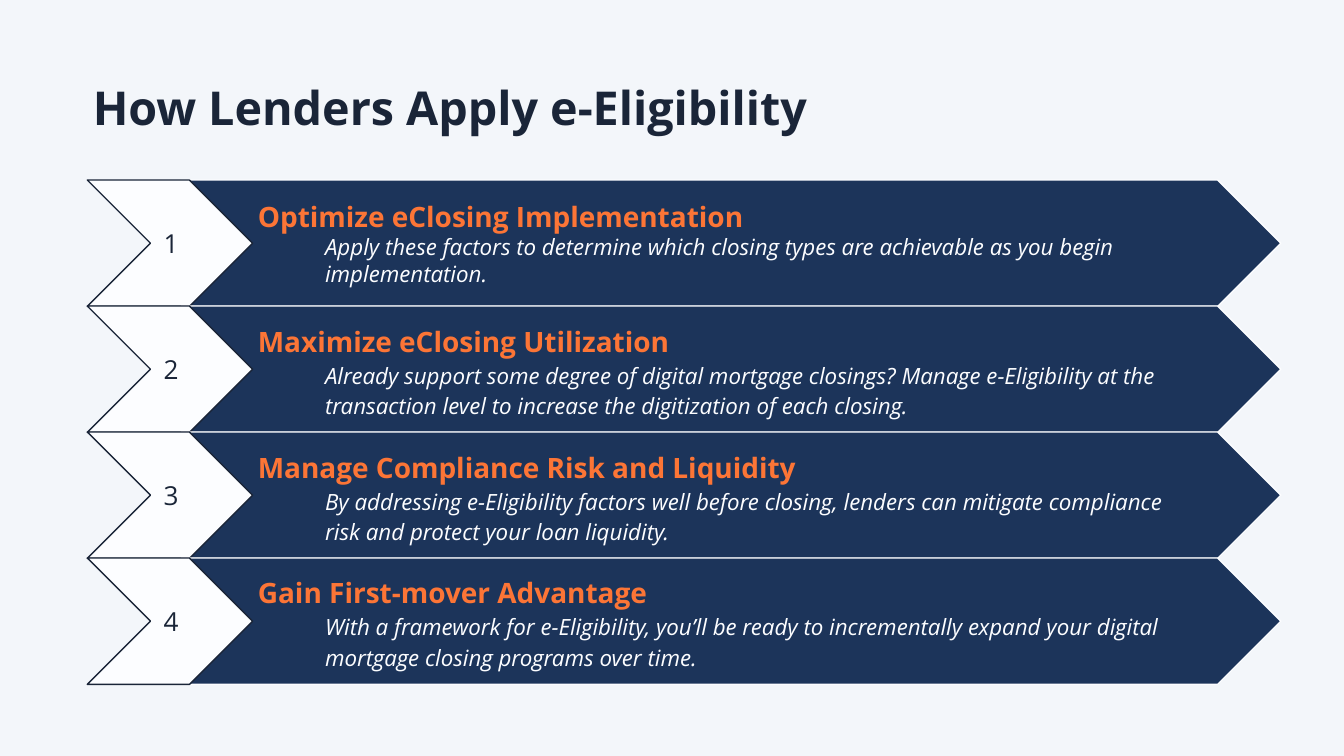
from copy import deepcopy
from dataclasses import dataclass

from pptx import Presentation
from pptx.dml.color import RGBColor
from pptx.enum.shapes import MSO_SHAPE
from pptx.enum.text import MSO_ANCHOR, MSO_AUTO_SIZE, PP_ALIGN
from pptx.util import Inches, Pt

CHEVRON = MSO_SHAPE.CHEVRON
TOP, MIDDLE = MSO_ANCHOR.TOP, MSO_ANCHOR.MIDDLE
NO_FIT = MSO_AUTO_SIZE.NONE
LEFT = PP_ALIGN.LEFT
TITLE_ONLY = 5


@dataclass(frozen=True)
class Theme:
    font: str = "Open Sans"
    background: str = "F3F6FA"
    ink: str = "1A2538"
    band: str = "1C345A"
    light: str = "FCFDFF"
    accent: str = "FC7536"
    title_size: int = 25
    heading_size: int = 15
    number_size: int = 14
    body_size: int = 12


THEME = Theme()

# Grid: one row per step, a number column and a band column
SLIDE_W = 10
SLIDE_H = SLIDE_W * 9 / 16
ROW_TOP, ROW_H = 1.34, 0.94
ROW_STEP = SLIDE_H / 6
NUMBER_X, NUMBER_W = 0.65, 1.23
BAND_X, BAND_W = 1.35, 8.18
HANGING = 0.5
MARGINS = {"left": 0.1, "top": 0.1, "right": 0.13, "bottom": 0.1}

TITLE = "How Lenders Apply e-Eligibility"
# Heading, lines of detail, line spacing
STEPS = [
    ("Optimize eClosing Implementation",
     ["Apply these factors to determine which closing types are achievable "
      "as you begin implementation."], 1.0),
    ("Maximize eClosing Utilization",
     ["Already support some degree of digital mortgage closings? "
      "Manage e-Eligibility at the",
      "transaction level to increase the digitization of each closing."], 1.15),
    ("Manage Compliance Risk and Liquidity",
     ["By addressing e-Eligibility factors well before closing, lenders can "
      "mitigate compliance risk and protect your loan liquidity."], 1.15),
    ("Gain First-mover Advantage",
     ["With a framework for e-Eligibility, you’ll be ready to incrementally "
      "expand your digital mortgage closing programs over time."], 1.15),
]


def set_frame(tf, anchor):
    margins = {f"margin_{side}": Inches(gap) for side, gap in MARGINS.items()}
    values = {"word_wrap": True, "auto_size": NO_FIT,
              "vertical_anchor": anchor, **margins}
    for name, value in values.items():
        setattr(tf, name, value)
    tf.paragraphs[0].alignment = LEFT
    return tf.paragraphs[0]


def add_run(p, text, size, color, bold=False, italic=False):
    r = p.add_run()
    r.text = text
    values = {"name": THEME.font, "size": Pt(size),
              "bold": bold, "italic": italic}
    for name, value in values.items():
        setattr(r.font, name, value)
    r.font.color.rgb = RGBColor.from_string(color)
    return r


def add_break(p, r):
    """Break the line at the type size of the run before it."""
    p.add_line_break()
    p._p[-1].append(deepcopy(r.font._rPr))


def add_title(s):
    title = s.shapes.title
    box = {"left": 0.59, "top": 0.49, "width": 9.32, "height": 0.65}
    for name, value in box.items():
        setattr(title, name, Inches(value))
    p = set_frame(title.text_frame, TOP)
    add_run(p, TITLE, THEME.title_size, THEME.ink, bold=True)


def add_chevron(s, x, y, width, fill, line):
    sp = s.shapes.add_shape(CHEVRON, Inches(x), Inches(y),
                            Inches(width), Inches(ROW_H))
    sp.shadow.inherit = False
    sp.fill.solid()
    sp.fill.fore_color.rgb = RGBColor.from_string(fill)
    sp.line.color.rgb = RGBColor.from_string(line)
    sp.line.width = Pt(0.75)
    return set_frame(sp.text_frame, MIDDLE)


def add_step(s, index, heading, details, spacing):
    y = ROW_TOP + index * ROW_STEP

    # Band with heading and detail
    p = add_chevron(s, BAND_X, y, BAND_W, THEME.band, THEME.light)
    p._p.get_or_add_pPr().set("marL", str(Inches(HANGING)))
    p._p.get_or_add_pPr().set("indent", str(-Inches(HANGING)))
    p.line_spacing = spacing
    r = add_run(p, heading, THEME.heading_size, THEME.accent, bold=True)
    for detail in details:
        add_break(p, r)
        r = add_run(p, detail, THEME.body_size, THEME.light, italic=True)

    # Number on top of the band's notch
    p = add_chevron(s, NUMBER_X, y, NUMBER_W, THEME.light, THEME.ink)
    add_run(p, str(index + 1), THEME.number_size, THEME.ink)


def main():
    prs = Presentation()
    prs.slide_width, prs.slide_height = Inches(SLIDE_W), Inches(SLIDE_H)
    s = prs.slides.add_slide(prs.slide_layouts[TITLE_ONLY])
    s.background.fill.solid()
    s.background.fill.fore_color.rgb = RGBColor.from_string(THEME.background)

    add_title(s)
    for index, step in enumerate(STEPS):
        add_step(s, index, *step)
    prs.save("out.pptx")


if __name__ == "__main__":
    main()
